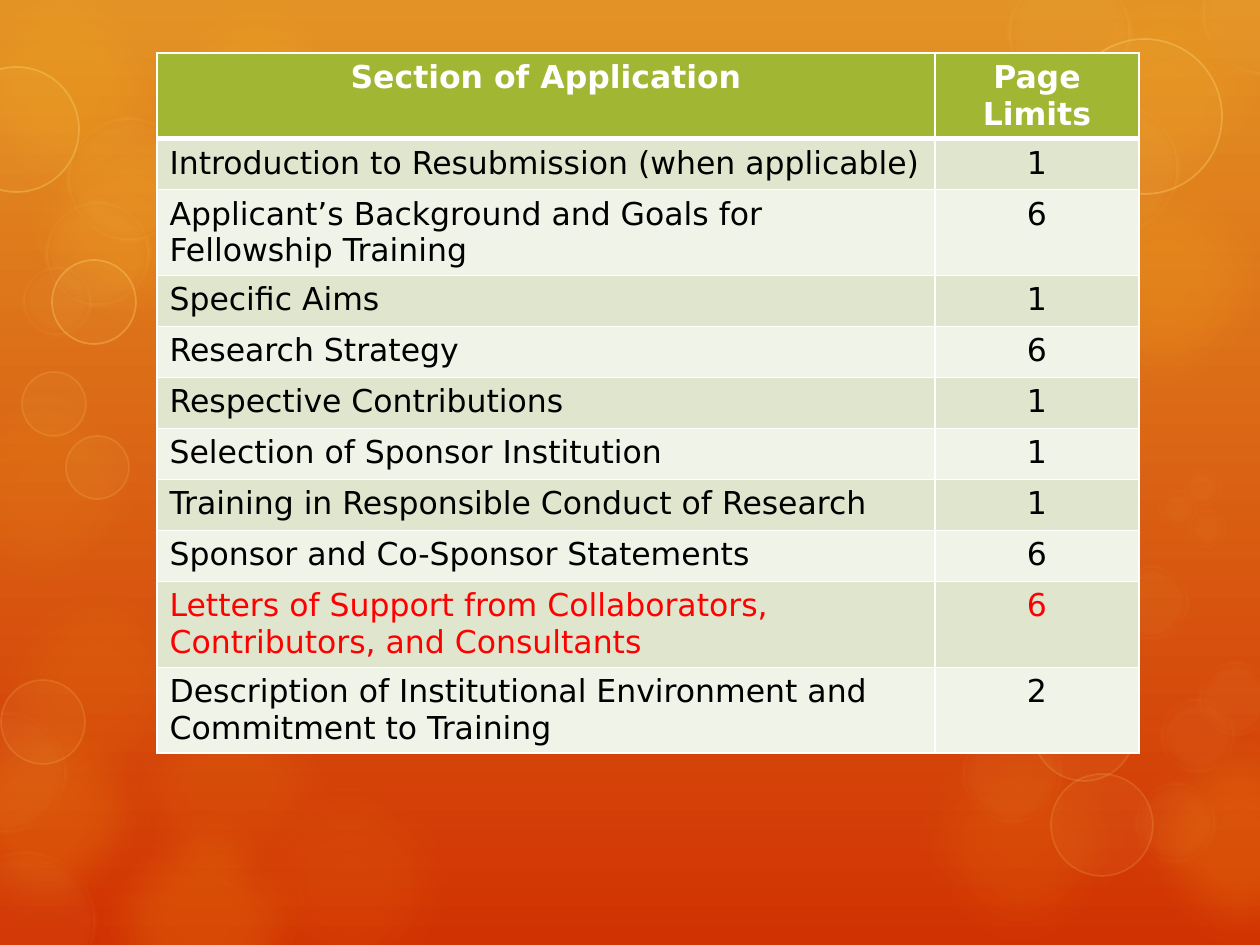
from lxml.etree import SubElement
from pptx import Presentation
from pptx.dml.color import RGBColor
from pptx.enum.shapes import MSO_SHAPE
from pptx.enum.text import PP_ALIGN
from pptx.oxml.ns import qn
from pptx.util import Pt

PX = 914400 // 126
WIDE, HIGH = 1260, 945
HUES = {
    "top": "E39325", "base": "D13202", "gold": "FDC61B", "lemon": "FFE281",
    "white": "FFFFFF", "black": "000000", "red": "FF0000",
    "head": "A1B633", "odd": "E0E5CE", "even": "F0F3E8",
}
HAZE = [
    (-32, 557, 8), (72, 790, 16), (-70, -41, 14), (127, -23, 20),
    (0, 91, 15), (1033, -41, 10), (1033, 151, 15), (1110, 708, 16),
    (-86, 682, 16), (97, 660, 8), (890, 708, 10), (218, 751, 8),
    (-88, 355, 8),
]
RINGS = [
    (1, 680, 84, 1, 15), (-45, 850, 142, 5, 15), (-55, 711, 123, 5, 15),
    (-46, 67, 125, 1, 30), (66, 116, 126, 5, 30), (44, 200, 107, 5, 30),
    (52, 260, 84, 1, 30), (21, 265, 72, 5, 30), (1007, -30, 125, 5, 30),
    (1201, -50, 126, 5, 30), (1067, 39, 155, 1, 30), (1046, 101, 134, 5, 30),
    (1051, 774, 102, 1, 15), (961, 722, 102, 5, 15), (1033, 679, 102, 1, 15),
    (1134, 781, 83, 5, 15), (1113, 564, 77, 5, 15), (1159, 697, 77, 5, 15),
    (1197, 660, 77, 5, 15), (1181, 466, 42, 5, 15), (1157, 488, 42, 5, 15),
    (1186, 508, 42, 5, 15), (22, 372, 64, 1, 15), (66, 436, 63, 1, 15),
]
ROWS = [
    ("Section of Application", "Page Limits"),
    ("Introduction to Resubmission (when applicable)", "1"),
    ("Applicant’s Background and Goals for Fellowship Training", "6"),
    ("Specific Aims", "1"),
    ("Research Strategy", "6"),
    ("Respective Contributions", "1"),
    ("Selection of Sponsor Institution", "1"),
    ("Training in Responsible Conduct of Research", "1"),
    ("Sponsor and Co-Sponsor Statements", "6"),
    ("Letters of Support from Collaborators, Contributors, and Consultants", "6"),
    ("Description of Institutional Environment and Commitment to Training", "2"),
]
RED_ROW = 9


def rgb(name):
    return RGBColor.from_string(HUES[name])


def style(item, form):
    for name, value in form.items():
        setattr(item, name, value)


def bubble(slide, box, x, y, size, fill, clear, width=0, faint=0, soft=0):
    left, top = box[:2]
    shape = slide.shapes.add_shape(
        MSO_SHAPE.OVAL, (left + x) * PX, (top + y) * PX, size * PX, size * PX)
    shape.shadow.inherit = False
    shape.fill.solid()
    shape.fill.fore_color.rgb = rgb(fill)
    if width:
        shape.line.color.rgb = rgb(fill)
        shape.line.width = Pt(width)
    else:
        shape.line.fill.background()
    props = shape._element.spPr
    for tint, part in zip(props.findall(".//" + qn("a:srgbClr")), (clear, faint)):
        SubElement(tint, qn("a:alpha"), val=str(part * 1000))
    if soft:
        SubElement(props.find(qn("a:effectLst")), qn("a:softEdge"), rad=str(Pt(soft)))


def backdrop(slide, box):
    fill = slide.background.fill
    fill.gradient()
    fill.gradient_angle = 270
    for stop, name in zip(fill.gradient_stops, ("top", "base")):
        stop.color.rgb = rgb(name)
    for x, y, clear in HAZE:
        bubble(slide, box, x, y, 263, "gold", clear, soft=25)
    for x, y, size, width, faint in RINGS:
        soft = width if width > 1 else 0
        bubble(slide, box, x, y, size, "lemon", 5, width, faint, soft)


def border(cell, sides):
    props = cell._tc.get_or_add_tcPr()
    for side, width in sides.items():
        line = SubElement(props, qn("a:ln" + side), w=str(Pt(width)))
        paint = SubElement(line, qn("a:solidFill"))
        SubElement(paint, qn("a:srgbClr"), val=HUES["white"])


def limits(slide, box):
    left, top, wide, high = box
    table = slide.shapes.add_table(
        len(ROWS), 2, left * PX, top * PX, wide * PX, high * PX).table
    side = 204
    for col, width in zip(table.columns, (wide - side, side)):
        col.width = width * PX
    for row, texts in enumerate(ROWS):
        table.rows[row].height = high // len(ROWS) * PX
        head = row == 0
        back = "head" if head else "odd" if row % 2 else "even"
        ink = "white" if head else "red" if row == RED_ROW else "black"
        for col, text in enumerate(texts):
            cell = table.cell(row, col)
            border(cell, {"L": 1, "R": 1, "T": 3 if row == 1 else 1, "B": 3 if head else 1})
            cell.fill.solid()
            cell.fill.fore_color.rgb = rgb(back)
            para = cell.text_frame.paragraphs[0]
            para.alignment = PP_ALIGN.CENTER if head or col else PP_ALIGN.LEFT
            run = para.add_run()
            run.text = text
            style(run.font, {"name": "DejaVu Sans", "size": Pt(18), "bold": head})
            run.font.color.rgb = rgb(ink)


def main():
    deck = Presentation()
    style(deck, {"slide_width": WIDE * PX, "slide_height": HIGH * PX})
    slide = deck.slides.add_slide(deck.slide_layouts[6])
    backdrop(slide, (0, 0, WIDE, HIGH))
    limits(slide, (157, 53, 982, 561))
    deck.save("out.pptx")


if __name__ == "__main__":
    main()
